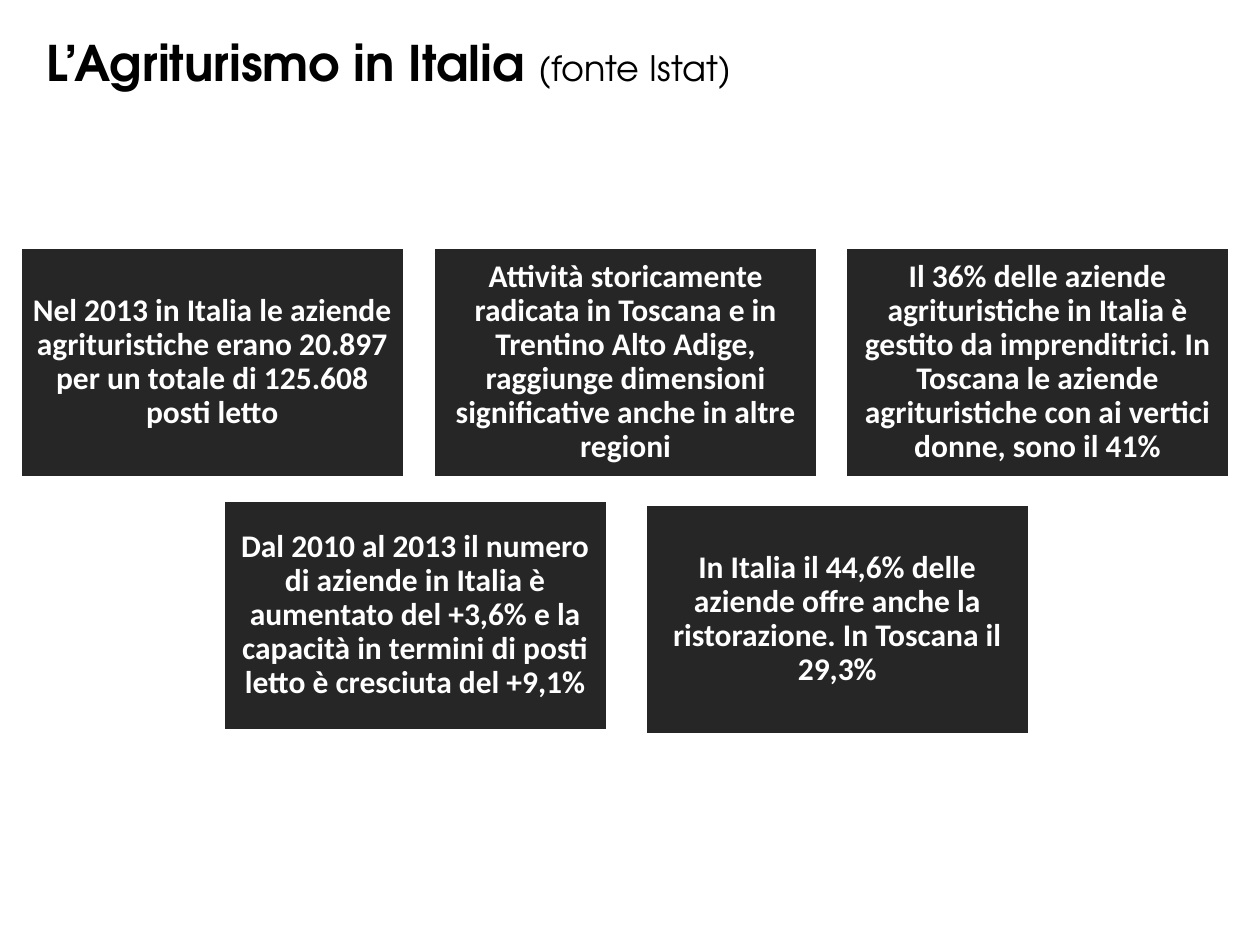
from pptx import Presentation
from pptx.dml.color import RGBColor
from pptx.enum.shapes import MSO_SHAPE
from pptx.enum.text import MSO_ANCHOR, MSO_AUTO_SIZE, PP_ALIGN
from pptx.util import Inches, Pt

TITLE_RUNS = [("L’Agriturismo in Italia ", "title", True), ("(fonte Istat)", "source", False)]
FACTS = [
    (0.16, 1.96, "Nel 2013 in Italia le aziende agrituristiche erano 20.897 per un totale di 125.608 posti letto"),
    (3.44, 1.96, "Attività storicamente radicata in Toscana e in Trentino Alto Adige, "
                 "raggiunge dimensioni significative anche in altre regioni"),
    (6.71, 1.96, "Il 36% delle aziende agrituristiche in Italia è gestito da imprenditrici. "
                 "In Toscana le aziende agrituristiche con ai vertici donne, sono il 41%"),
    (1.77, 3.97, "Dal 2010 al 2013 il numero di aziende in Italia è aumentato del +3,6% "
                 "e la capacità in termini di posti letto è cresciuta del +9,1%"),
    (5.12, 4, "In Italia il 44,6% delle aziende offre anche la ristorazione. In Toscana il 29,3%"),
]
CARD_WIDTH, CARD_HEIGHT, CARD_INSET = Inches(3.05), Inches(1.83), Inches(0.07)
THEME = {
    "card": RGBColor(0x26, 0x26, 0x26),
    "light": RGBColor(0xFF, 0xFF, 0xFF),
    "dark": RGBColor(0, 0, 0),
    "title_font": "TeX Gyre Adventor",
    "body_font": "Calibri",
    "title": Pt(28),
    "source": Pt(20),
    "body": Pt(18),
    "border": Pt(2),
}


def add_title(slide):
    box = slide.shapes.add_textbox(Inches(0.27), Inches(0.21), Inches(9.14), Inches(0.57))
    frame = box.text_frame
    frame.word_wrap = True
    frame.auto_size = MSO_AUTO_SIZE.SHAPE_TO_FIT_TEXT
    paragraph = frame.paragraphs[0]
    paragraph.font.name = THEME["title_font"]
    paragraph.font.color.rgb = THEME["dark"]
    for text, size, bold in TITLE_RUNS:
        run = paragraph.add_run()
        run.text = text
        run.font.size = THEME[size]
        run.font.bold = bold


def add_card(slide, left, top, text):
    card = slide.shapes.add_shape(MSO_SHAPE.RECTANGLE, Inches(left), Inches(top), CARD_WIDTH, CARD_HEIGHT)
    card.shadow.inherit = False
    card.fill.solid()
    card.fill.fore_color.rgb = THEME["card"]
    card.line.color.rgb = THEME["light"]
    card.line.width = THEME["border"]
    frame = card.text_frame
    frame.word_wrap = True
    frame.vertical_anchor = MSO_ANCHOR.MIDDLE
    frame.margin_left = frame.margin_right = CARD_INSET
    frame.margin_top = frame.margin_bottom = CARD_INSET
    paragraph = frame.paragraphs[0]
    paragraph.text = text
    paragraph.alignment = PP_ALIGN.CENTER
    paragraph.line_spacing = 0.9
    paragraph.font.name = THEME["body_font"]
    paragraph.font.size = THEME["body"]
    paragraph.font.bold = True
    paragraph.font.color.rgb = THEME["light"]


def main():
    presentation = Presentation()
    presentation.slide_width = Inches(10)
    presentation.slide_height = Inches(7.5)
    slide = presentation.slides.add_slide(presentation.slide_layouts[6])
    for left, top, text in FACTS:
        add_card(slide, left, top, text)
    add_title(slide)
    presentation.save("out.pptx")


if __name__ == "__main__":
    main()
